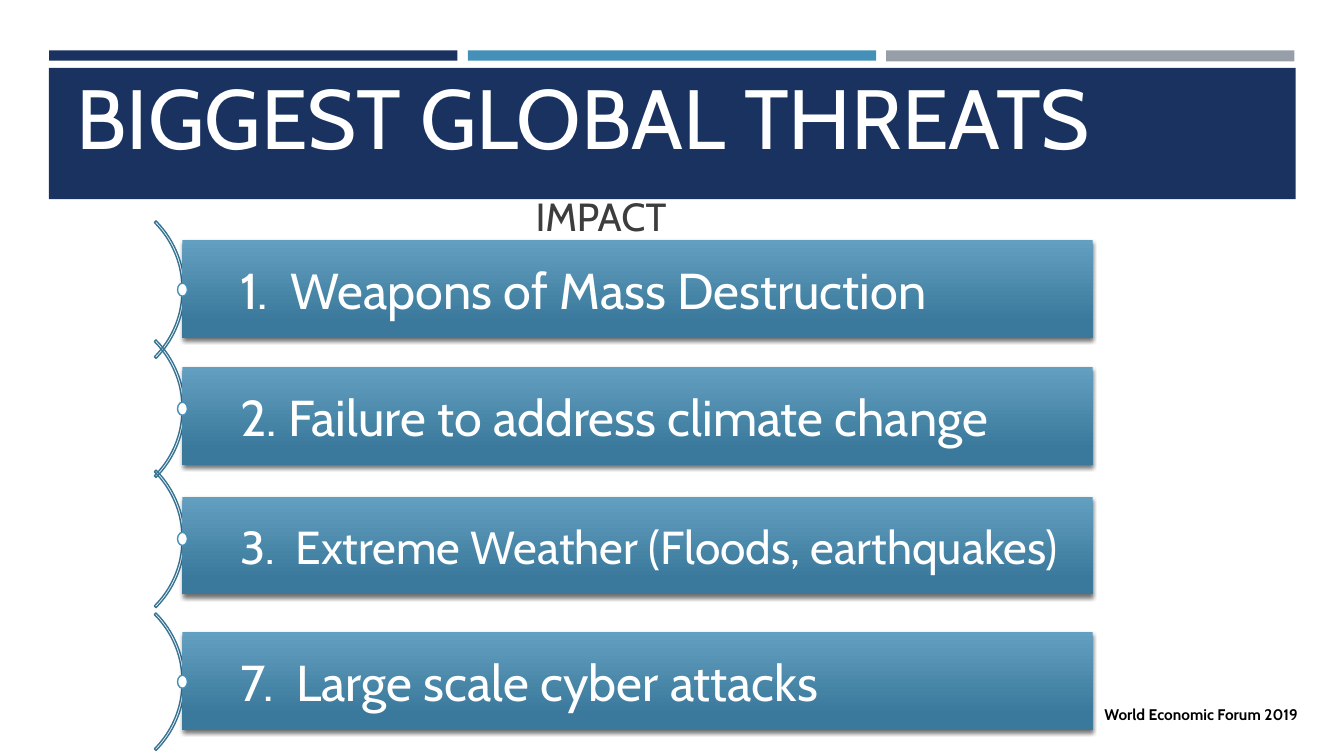
import pptx
import pptx.util
import pptx.dml.color
import pptx.enum.shapes
import pptx.enum.text
import pptx.oxml
import pptx.oxml.ns

Cm = pptx.util.Cm
Pt = pptx.util.Pt
MSO = pptx.enum.shapes.MSO_SHAPE
ANCHOR = pptx.enum.text.MSO_ANCHOR
ALIGN = pptx.enum.text.PP_ALIGN


def rgb(value):
    return pptx.dml.color.RGBColor.from_string(value)


def write(sp, text, size, color, anchor=ANCHOR.TOP, align=ALIGN.LEFT, bold=False):
    tf = sp.text_frame
    tf.word_wrap = True
    tf.vertical_anchor = anchor
    tf.text = text
    p = tf.paragraphs[0]
    p.alignment = align
    r = p.runs[0]
    r.font.name = "Cabin"
    r.font.size = Pt(size)
    r.font.bold = bold
    r.font.color.rgb = rgb(color)


prs = pptx.Presentation()
prs.slide_width = Cm(33.87)
prs.slide_height = Cm(19.05)
s = prs.slides.add_slide(prs.slide_layouts[6])

bands = [
    (1.24, 1.27, 10.29, 0.26, "1A3260"),
    (11.79, 1.27, 10.29, 0.26, "4590B8"),
    (22.33, 1.27, 10.29, 0.28, "969FA7"),
    (1.23, 1.71, 31.42, 3.31, "1A3260"),
]
for left, top, width, height, color in bands:
    sp = s.shapes.add_shape(MSO.RECTANGLE, Cm(left), Cm(top), Cm(width), Cm(height))
    sp.shadow.inherit = False
    sp.fill.solid()
    sp.fill.fore_color.rgb = rgb(color)
    sp.line.fill.background()

title = s.shapes.add_textbox(Cm(1.68), Cm(1.83), Cm(30.53), Cm(2.49))
write(title, "BIGGEST GLOBAL THREATS", 60, "FFFFFF", ANCHOR.BOTTOM)

heading = s.shapes.add_textbox(Cm(0.97), Cm(3.89), Cm(28.35), Cm(3.12))
write(heading, "IMPACT", 28, "3D3D3D", ANCHOR.MIDDLE, ALIGN.CENTER)

bar_left = 4.6
arc_size = 4.9
dot_width, dot_height = 0.25, 0.33
threats = [
    ("1.  Weapons of Mass Destruction", 36, 4.85, 6.05),
    ("2. Failure to address climate change", 36, 7.85, 9.25),
    ("3.  Extreme Weather (Floods, earthquakes)", 33, 11.13, 12.52),
    ("7.  Large scale cyber attacks", 36, 14.73, 15.93),
]
for text, size, arc_top, bar_top in threats:
    arc = s.shapes.add_shape(MSO.BLOCK_ARC, Cm(-0.25), Cm(arc_top), Cm(arc_size), Cm(arc_size))
    for i, value in enumerate((189, 27, 0.012)):
        arc.adjustments[i] = value
    arc.shadow.inherit = False
    arc.fill.background()
    arc.line.color.rgb = rgb("377393")
    arc.line.width = Pt(1)

    bar = s.shapes.add_shape(MSO.RECTANGLE, Cm(bar_left), Cm(bar_top), Cm(22.94), Cm(2.46))
    bar.line.fill.background()
    bar.fill.gradient()
    bar.fill.gradient_angle = 270
    for stop, (position, color) in zip(bar.fill.gradient_stops, [(0, "639FC1"), (0.84, "3A799B")]):
        stop.position = position
        stop.color.rgb = rgb(color)
    bar.shadow.inherit = False
    effects = bar._element.spPr.find(pptx.oxml.ns.qn("a:effectLst"))
    effects.append(pptx.oxml.parse_xml(
        f'<a:outerShdw {pptx.oxml.ns.nsdecls("a")} blurRad="{Pt(3)}" dist="{Pt(2)}" '
        'dir="5400000" rotWithShape="0"><a:srgbClr val="000000"><a:alpha val="55000"/>'
        '</a:srgbClr></a:outerShdw>'))
    write(bar, text, size, "FFFFFF", ANCHOR.MIDDLE)
    bar.text_frame.margin_left = Cm(1.45)

    dot_top = arc_top + (arc_size - dot_height) / 2
    dot = s.shapes.add_shape(MSO.OVAL, Cm(bar_left - dot_width / 2), Cm(dot_top),
                             Cm(dot_width), Cm(dot_height))
    dot.shadow.inherit = False
    dot.fill.solid()
    dot.fill.fore_color.rgb = rgb("FFFFFF")
    dot.line.color.rgb = rgb("4590B8")
    dot.line.width = Pt(1)

credit = s.shapes.add_textbox(Cm(27.58), Cm(17.65), Cm(6.29), Cm(0.74))
write(credit, "World Economic Forum 2019", 11, "000000", bold=True)

prs.save("out.pptx")
